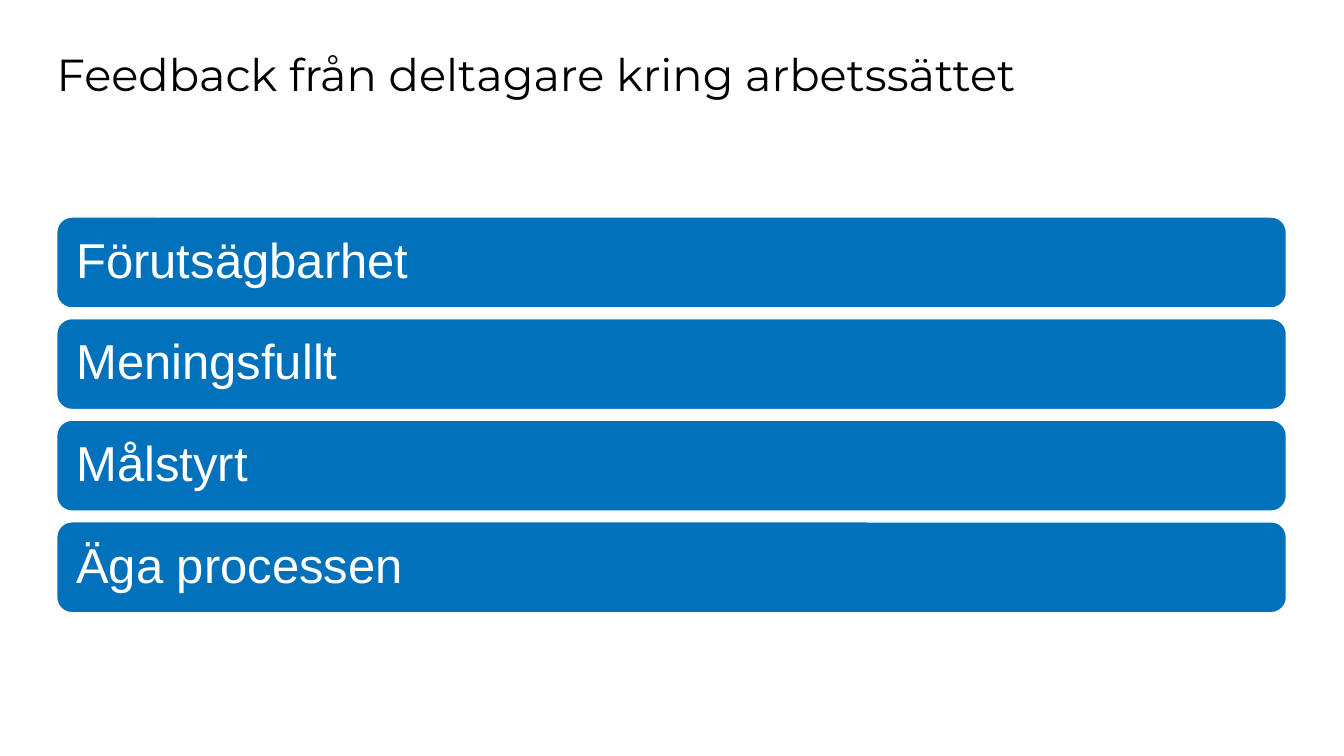
"""Build the slide on participants' feedback about the way of working."""
from dataclasses import dataclass

from pptx import Presentation
from pptx.dml.color import RGBColor
from pptx.enum.shapes import MSO_SHAPE
from pptx.enum.text import MSO_ANCHOR, MSO_AUTO_SIZE, PP_ALIGN
from pptx.slide import Slide
from pptx.text.text import TextFrame
from pptx.util import Cm, Pt

COLOURS = {"ink": "000000", "bar": "0071BA", "white": "FFFFFF"}
LEFT = 1.43
FIRST_BAR_TOP = 5.47
BAR_PITCH = 2.56
THEMES = ("Förutsägbarhet", "Meningsfullt", "Målstyrt", "Äga processen")


@dataclass(frozen=True)
class TextStyle:
    """Look and placement of one line of text."""

    font: str
    size: float
    colour: str
    anchor: MSO_ANCHOR
    inset: float


@dataclass(frozen=True)
class FeedbackBar:
    """One feedback theme and the top of its bar in centimetres."""

    theme: str
    top: float


HEADING = TextStyle("Montserrat", 32, "ink", MSO_ANCHOR.TOP, 0)
BAR_LABEL = TextStyle("Arial", 35, "white", MSO_ANCHOR.MIDDLE, 0.38)


def colour(name: str) -> RGBColor:
    """Look up a named colour."""
    return RGBColor.from_string(COLOURS[name])


def write(frame: TextFrame, wording: str, style: TextStyle) -> None:
    """Write one left-aligned line in the given style."""
    frame.word_wrap = True
    frame.auto_size = MSO_AUTO_SIZE.NONE
    frame.vertical_anchor = style.anchor
    frame.margin_left = frame.margin_right = Cm(style.inset)
    frame.margin_top = frame.margin_bottom = Cm(style.inset)
    line = frame.paragraphs[0]
    line.alignment = PP_ALIGN.LEFT
    line.line_spacing = 0.9
    line.space_before = Pt(0)
    run = line.add_run()
    run.text = wording
    run.font.name = style.font
    run.font.size = Pt(style.size)
    run.font.color.rgb = colour(style.colour)


def add_heading(slide: Slide, wording: str) -> None:
    """Place and fill the title placeholder."""
    heading = slide.shapes.title
    heading.left, heading.top = Cm(LEFT), Cm(1.32)
    heading.width, heading.height = Cm(30.56), Cm(3.68)
    write(heading.text_frame, wording, HEADING)


def add_bar(slide: Slide, bar: FeedbackBar) -> None:
    """Draw one rounded bar with its theme."""
    panel = slide.shapes.add_shape(
        MSO_SHAPE.ROUNDED_RECTANGLE, Cm(LEFT), Cm(bar.top), Cm(30.99), Cm(2.29)
    )
    panel.shadow.inherit = False
    panel.fill.solid()
    panel.fill.fore_color.rgb = colour("bar")
    panel.line.color.rgb = colour("white")
    panel.line.width = Pt(1)
    write(panel.text_frame, bar.theme, BAR_LABEL)


def main() -> None:
    """Build and save the presentation."""
    presentation = Presentation()
    presentation.slide_width, presentation.slide_height = Cm(33.87), Cm(19.05)
    slide = presentation.slides.add_slide(presentation.slide_layouts[5])
    add_heading(slide, "Feedback från deltagare kring arbetssättet")
    for position, theme in enumerate(THEMES):
        add_bar(slide, FeedbackBar(theme, FIRST_BAR_TOP + position * BAR_PITCH))
    presentation.save("out.pptx")


if __name__ == "__main__":
    main()
